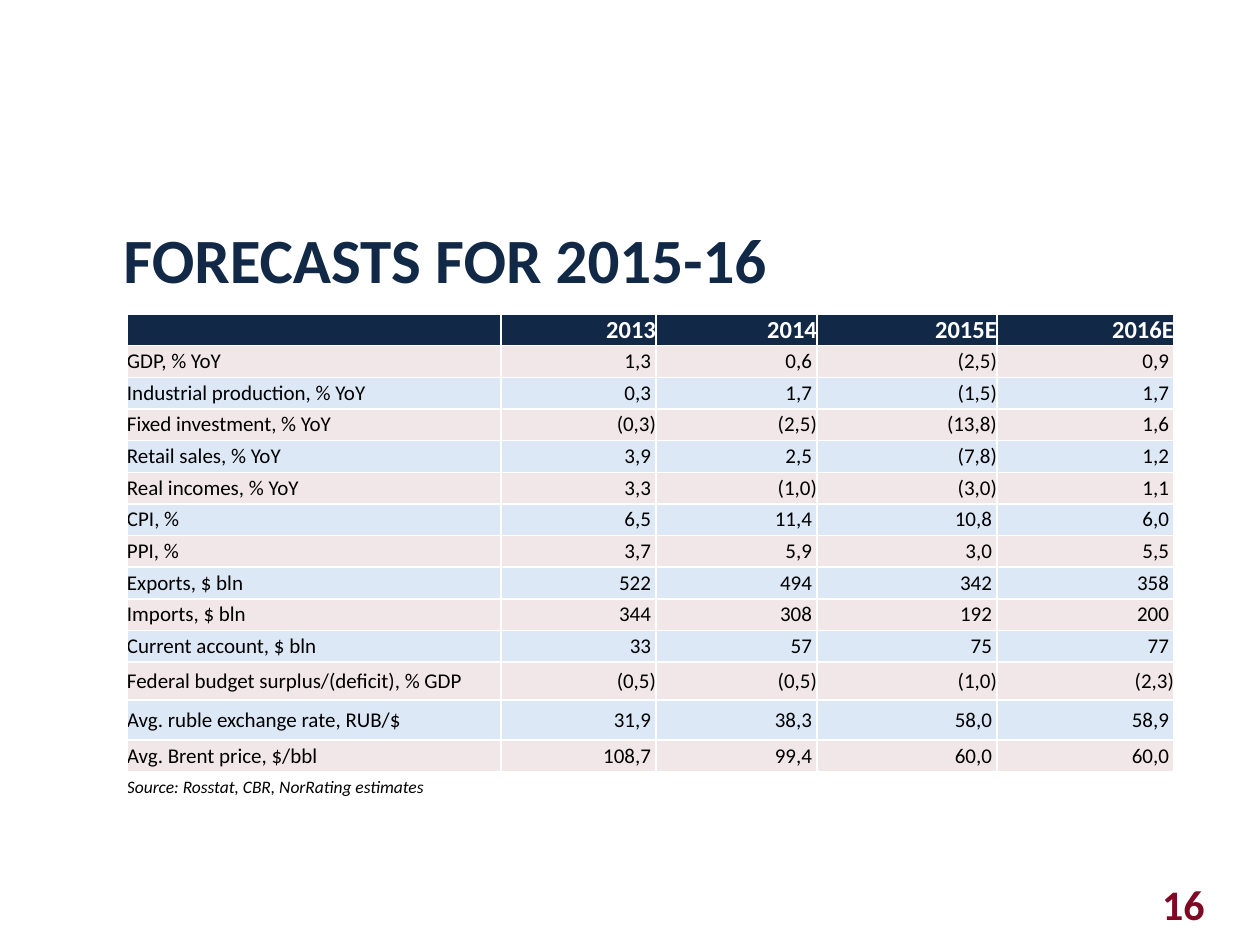
from dataclasses import dataclass

from lxml.etree import SubElement
from pptx import Presentation
from pptx.dml.color import RGBColor as RGB
from pptx.enum.text import MSO_ANCHOR as Anchor, PP_ALIGN as Align
from pptx.oxml.ns import qn
from pptx.util import Emu, Pt

EMU_PER_PX = 914400 // 126


@dataclass(frozen=True)
class Theme:
    font: str = "Calibri"
    navy: str = "112846"
    maroon: str = "800824"
    white: str = "FFFFFF"
    black: str = "000000"
    bands: tuple = ("F1E7E8", "DDE8F6")
    title: int = 36
    page: int = 24
    header: int = 14
    body: int = 12
    source: int = 10


THEME = Theme()

HEADER = ("", "2013", "2014", "2015E", "2016E")
FORECASTS = (
    ("GDP, % YoY", "1,3", "0,6", "(2,5)", "0,9"),
    ("Industrial production, % YoY", "0,3", "1,7", "(1,5)", "1,7"),
    ("Fixed investment, % YoY", "(0,3)", "(2,5)", "(13,8)", "1,6"),
    ("Retail sales, % YoY", "3,9", "2,5", "(7,8)", "1,2"),
    ("Real incomes, % YoY", "3,3", "(1,0)", "(3,0)", "1,1"),
    ("CPI, %", "6,5", "11,4", "10,8", "6,0"),
    ("PPI, %", "3,7", "5,9", "3,0", "5,5"),
    ("Exports, $ bln", "522", "494", "342", "358"),
    ("Imports, $ bln", "344", "308", "192", "200"),
    ("Current account, $ bln", "33", "57", "75", "77"),
    ("Federal budget surplus/(deficit), % GDP", "(0,5)", "(0,5)", "(1,0)", "(2,3)"),
    ("Avg. ruble exchange rate, RUB/$", "31,9", "38,3", "58,0", "58,9"),
    ("Avg. Brent price, $/bbl", "108,7", "99,4", "60,0", "60,0"),
)
SOURCE = "Source: Rosstat, CBR, NorRating estimates"

COLUMN_WIDTHS = (374, 155, 161, 180, 177)
TALL_ROWS = {11: 38, 12: 40}  # row index: height
DIGIT_INDENT = 5  # keeps digits clear of the closing bracket


def px(n):
    return Emu(round(n * EMU_PER_PX))


def style_text(p, size, color, bold=False, italic=False, align=Align.LEFT):
    p.alignment = align
    f = p.font
    f.name, f.size, f.bold, f.italic = THEME.font, Pt(size), bold, italic
    f.color.rgb = RGB.from_string(color)


def add_text(slide, box, text, size, color, align=Align.LEFT):
    tf = slide.shapes.add_textbox(*map(px, box)).text_frame
    tf.word_wrap = True
    p = tf.paragraphs[0]
    p.text = text
    style_text(p, size, color, bold=True, align=align)


def add_borders(cell):
    tcPr = cell._tc.get_or_add_tcPr()
    for i, side in enumerate(("a:lnL", "a:lnR", "a:lnT", "a:lnB")):
        ln = tcPr.makeelement(qn(side), {"w": str(Pt(1))})
        fill = SubElement(ln, qn("a:solidFill"))
        SubElement(fill, qn("a:srgbClr"), val=THEME.white)
        tcPr.insert(i, ln)  # borders precede the fill


def fill_cell(cell, text, fill=None, indent=0, **style):
    cell.margin_left = cell.margin_top = cell.margin_bottom = 0
    cell.margin_right = px(indent)
    cell.vertical_anchor = Anchor.MIDDLE
    p = cell.text_frame.paragraphs[0]
    if text:
        p.text = text
    else:  # an empty cell takes its line height from the end mark
        SubElement(p._p, qn("a:endParaRPr"), sz=str(style["size"] * 100))
    style_text(p, **style)
    if fill:
        cell.fill.solid()
        cell.fill.fore_color.rgb = RGB.from_string(fill)
    else:
        cell.fill.background()
    add_borders(cell)


def add_forecast_table(slide, box):
    left, top, width, height = box
    n_rows = len(FORECASTS) + 2
    table = slide.shapes.add_table(n_rows, len(HEADER), *map(px, box)).table
    table.first_row = table.horz_banding = False
    for column, w in zip(table.columns, COLUMN_WIDTHS):
        column.width = px(w)
    row_h = (height - sum(TALL_ROWS.values())) / (n_rows - len(TALL_ROWS))
    for i, row in enumerate(table.rows):
        row.height = px(TALL_ROWS.get(i, row_h))

    # Header
    for c, text in enumerate(HEADER):
        fill_cell(table.cell(0, c), text, THEME.navy, size=THEME.header,
                  color=THEME.white, bold=True, align=Align.RIGHT)

    # Banded forecast rows
    for r, values in enumerate(FORECASTS, start=1):
        band = THEME.bands[(r - 1) % 2]
        for c, text in enumerate(values):
            indent = DIGIT_INDENT if c and not text.endswith(")") else 0
            fill_cell(table.cell(r, c), text, band, indent, size=THEME.body,
                      color=THEME.black, align=Align.RIGHT if c else Align.LEFT)

    # Source line across the whole width
    last = n_rows - 1
    table.cell(last, 0).merge(table.cell(last, len(HEADER) - 1))
    fill_cell(table.cell(last, 0), SOURCE, size=THEME.source,
              color=THEME.black, italic=True)


def main():
    prs = Presentation()
    prs.slide_width, prs.slide_height = px(1260), px(945)
    slide = prs.slides.add_slide(prs.slide_layouts[6])
    add_text(slide, (1145, 872, 72, 63), "16", THEME.page, THEME.maroon, Align.RIGHT)
    add_text(slide, (111, 214, 1086, 90), "FORECASTS FOR 2015-16",
             THEME.title, THEME.navy)
    add_forecast_table(slide, (127, 314, 1047, 490))
    prs.save("out.pptx")


if __name__ == "__main__":
    main()
